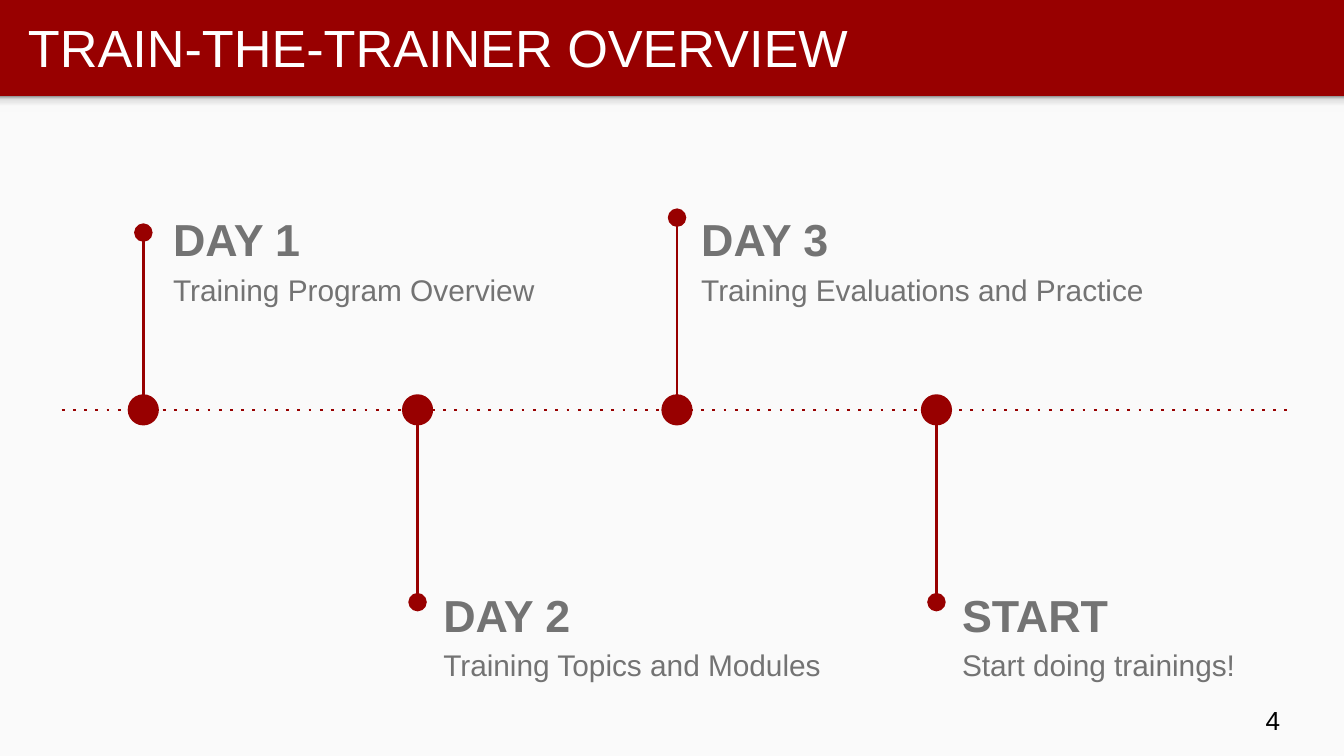
from lxml import etree
from pptx import Presentation
from pptx.dml.color import RGBColor
from pptx.enum import dml, shapes, text
from pptx.oxml.ns import qn
from pptx.util import Pt

TITLE = "TRAIN-THE-TRAINER OVERVIEW"
PAGE = "4"
# heading, detail, centre x, stem end y, text left, text width
MILESTONES = [
    ("DAY 1", "Training Program Overview", 76.8, 124.6, 85.7, 269.3),
    ("DAY 2", "Training Topics and Modules", 223.7, 322.6, 230.4, 241.2),
    ("DAY 3", "Training Evaluations and Practice", 362.7, 116.6, 368.6, 269.3),
    ("START", "Start doing trainings!", 501.7, 322.6, 508.3, 209.5),
]
THEME = dict(
    font="Arial", accent="980000", panel="FAFAFA", title="FFFFFF",
    body="737373", page="000000", title_size=28, head_size=24,
    detail_size=16, page_size=14, line=1.5,
    shade=[(0, "F9F9F9"), (36, "F9F9F9"), (80, "DEDEDE"), (100, "999999")],
)
W, H = 720, 405
PANEL_TOP, SHADE_H = 51.5, 8.6
AXIS_Y, AXIS_LEFT, AXIS_RIGHT = 219.6, 33.1, 689.8
RADIUS = 7.6
TEXT_ABOVE, TEXT_BELOW, TEXT_H = 102.2, 303.3, 76.3


def rgb(name):
    return RGBColor.from_string(THEME[name])


def add_shape(s, kind, x, y, w, h):
    sp = s.shapes.add_shape(kind, Pt(x), Pt(y), Pt(w), Pt(h))
    sp.shadow.inherit = False
    sp.line.fill.background()
    return sp


def add_line(s, x1, y1, x2, y2):
    cn = s.shapes.add_connector(
        shapes.MSO_CONNECTOR.STRAIGHT, Pt(x1), Pt(y1), Pt(x2), Pt(y2))
    cn.line.color.rgb = rgb("accent")
    cn.line.width = Pt(THEME["line"])
    etree.SubElement(cn._element.spPr, qn("a:effectLst"))
    return cn


def add_text(s, x, y, w, h, lines, anchor=text.MSO_ANCHOR.MIDDLE, spacing=None):
    """Add a text box; each line is (words, size, colour name, bold)."""
    tf = s.shapes.add_textbox(Pt(x), Pt(y), Pt(w), Pt(h)).text_frame
    tf.word_wrap = True
    tf.vertical_anchor = anchor
    tf.margin_left = tf.margin_right = tf.margin_top = tf.margin_bottom = Pt(7.2)
    for i, (words, size, color, bold) in enumerate(lines):
        p = tf.add_paragraph() if i else tf.paragraphs[0]
        p.line_spacing = spacing
        r = p.add_run()
        r.text = words
        r.font.name = THEME["font"]
        r.font.size = Pt(THEME[size])
        r.font.bold = bold
        r.font.color.rgb = rgb(color)


def add_backdrop(s):
    s.background.fill.solid()
    s.background.fill.fore_color.rgb = rgb("accent")
    rect = shapes.MSO_SHAPE.RECTANGLE
    panel = add_shape(s, rect, 0, PANEL_TOP, W, H - PANEL_TOP)
    panel.fill.solid()
    panel.fill.fore_color.rgb = rgb("panel")
    shade = add_shape(s, rect, 0, PANEL_TOP, W, SHADE_H)
    shade.fill.gradient()
    shade.fill.gradient_angle = 90
    stops = shade._element.spPr.find(".//" + qn("a:gsLst"))
    for old in list(stops):
        stops.remove(old)
    for pos, color in THEME["shade"]:
        gs = etree.SubElement(stops, qn("a:gs"), pos=str(pos * 1000))
        etree.SubElement(gs, qn("a:srgbClr"), val=color)


def add_milestone(s, heading, detail, x, end_y, left, width):
    above = end_y < AXIS_Y
    stem = add_line(s, x, AXIS_Y + (-RADIUS if above else RADIUS), x, end_y)
    etree.SubElement(stem.line._get_or_add_ln(), qn("a:tailEnd"),
                     type="oval", w="lg", len="lg")
    dot = add_shape(s, shapes.MSO_SHAPE.OVAL, x - RADIUS, AXIS_Y - RADIUS,
                    2 * RADIUS, 2 * RADIUS)
    dot.fill.solid()
    dot.fill.fore_color.rgb = rgb("accent")
    dot.line.color.rgb = rgb("accent")
    dot.line.width = Pt(THEME["line"])
    add_text(s, left, TEXT_ABOVE if above else TEXT_BELOW, width, TEXT_H,
             [(heading, "head_size", "body", True),
              (detail, "detail_size", "body", False)],
             text.MSO_ANCHOR.TOP, 1.15)


def main():
    prs = Presentation()
    prs.slide_width, prs.slide_height = Pt(W), Pt(H)
    s = prs.slides.add_slide(prs.slide_layouts[6])
    add_backdrop(s)
    add_text(s, 7.9, 1.4, 694.8, 47.5, [(TITLE, "title_size", "title", False)])
    axis = add_line(s, AXIS_LEFT, AXIS_Y, AXIS_RIGHT, AXIS_Y)
    axis.line.dash_style = dml.MSO_LINE.ROUND_DOT
    axis.line._get_or_add_ln().find(qn("a:prstDash")).set("val", "dot")
    for milestone in MILESTONES:
        add_milestone(s, *milestone)
    add_text(s, 671, 370, 43.2, 31, [(PAGE, "page_size", "page", False)])
    prs.save("out.pptx")


if __name__ == "__main__":
    main()
